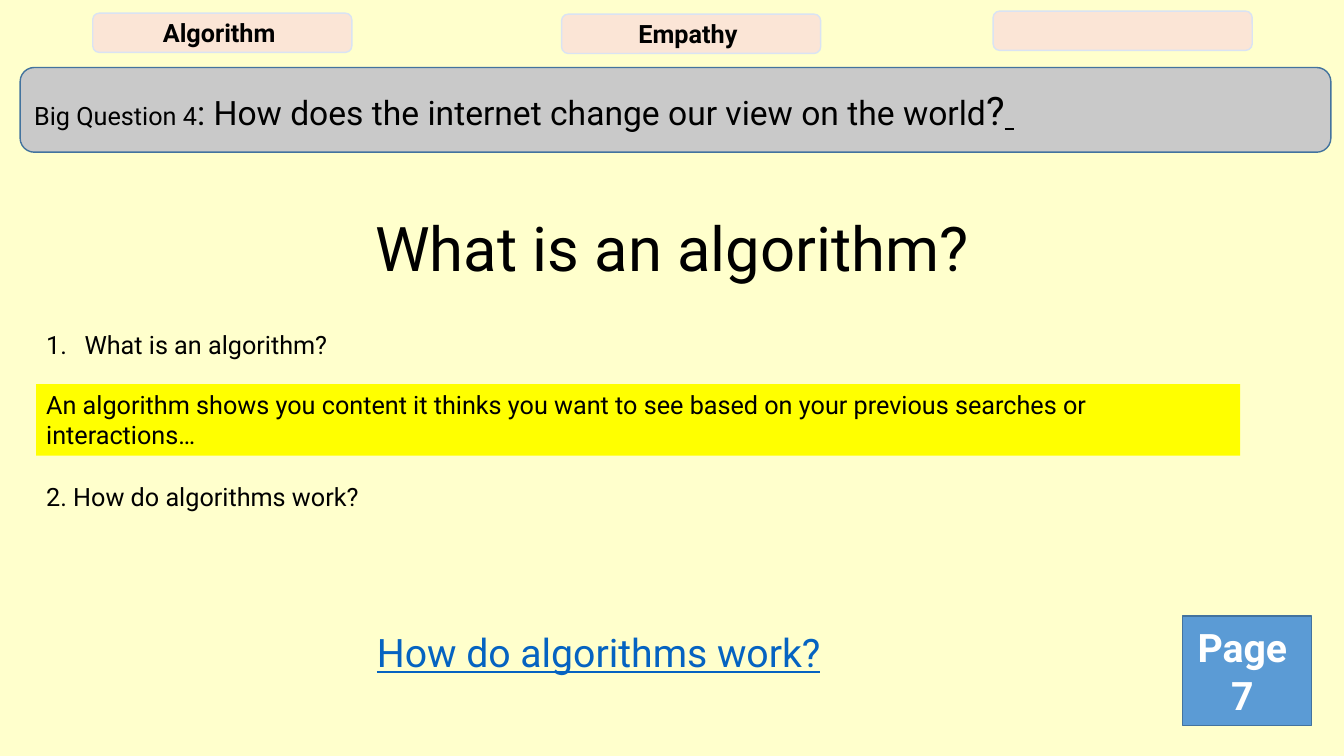
from pptx import Presentation
from pptx.dml.color import RGBColor
from pptx.enum.shapes import MSO_SHAPE as Shape
from pptx.enum.text import MSO_ANCHOR as Anchor, PP_ALIGN as Align
from pptx.oxml.xmlchemy import OxmlElement
from pptx.util import Inches, Pt

COLORS = {
    "background": "FFFFCC", "banner": "C9C9C9", "keyword": "FBE5D6",
    "keyword_line": "DAE3F3", "answer": "FFFF00", "page": "5B9BD5",
    "dark_line": "43739E", "text": "000000", "link": "0563C1", "white": "FFFFFF",
}

prs = Presentation()
prs.slide_width, prs.slide_height = Inches(13.33), Inches(7.5)
slide = prs.slides.add_slide(prs.slide_layouts[6])
slide.background.fill.solid()
slide.background.fill.fore_color.rgb = RGBColor.from_string(COLORS["background"])


def add_box(kind, box, fill=None, line=None, anchor=Anchor.MIDDLE):
    """Add a filled shape, or a plain text box when kind is None."""
    place = [Inches(length) for length in box]
    if kind is None:
        part = slide.shapes.add_textbox(*place)
    else:
        part = slide.shapes.add_shape(kind, *place)
        part.shadow.inherit = False
        part.fill.solid()
        part.fill.fore_color.rgb = RGBColor.from_string(COLORS[fill])
        if line:
            part.line.color.rgb = RGBColor.from_string(COLORS[line])
            part.line.width = Pt(1)
        else:
            part.line.fill.background()
    part.text_frame.word_wrap = True
    part.text_frame.vertical_anchor = anchor
    return part.text_frame


def write(paragraph, text, size=18, color="text", align=Align.LEFT, **formats):
    """Append one formatted run to a paragraph."""
    paragraph.alignment = align
    run = paragraph.add_run()
    run.text = text
    run.font.color.rgb = RGBColor.from_string(COLORS[color])
    for name, value in {"name": "Roboto", "size": Pt(size), **formats}.items():
        setattr(run.font, name, value)


# Big question banner
banner = add_box(Shape.ROUNDED_RECTANGLE, (0.2, 0.67, 13, 0.84), "banner", "dark_line")
for text, size, underline in [
    ("Big Question 4", 18, False),
    (": How does the internet change our view on the world", 24, False),
    ("?", 28, False),
    (" ", 28, True),
]:
    write(banner.paragraphs[0], text, size, underline=underline)

# Keyword tabs along the top
for left, top, word in [(0.92, 0.13, "Algorithm "), (9.85, 0.11, ""), (5.57, 0.14, "Empathy ")]:
    keyword = add_box(Shape.ROUNDED_RECTANGLE, (left, top, 2.57, 0.39), "keyword", "keyword_line")
    if word:
        write(keyword.paragraphs[0], word, align=Align.CENTER, bold=True)

# Title and video link
title = add_box(None, (0.92, 1.77, 11.5, 1.45))
write(title.paragraphs[0], "What is an algorithm?", 44, align=Align.CENTER)
video = add_box(None, (3.64, 6.24, 5.63, 0.62), anchor=Anchor.TOP)
write(video.paragraphs[0], "How do algorithms work?", 28, "link", underline=True)
for heading in (title, video):
    heading.paragraphs[0].line_spacing = 0.9

# Highlighted answer
answer = add_box(Shape.RECTANGLE, (0.36, 3.81, 11.94, 0.71), "answer", anchor=Anchor.TOP)
write(answer.paragraphs[0], "An algorithm shows you content it thinks you want to see "
      "based on your previous searches or interactions…")

# Questions, spaced to leave room for the answer between them
questions = add_box(None, (0.36, 3.22, 7.45, 1.92), anchor=Anchor.TOP)
first = questions.paragraphs[0]
properties = first._p.get_or_add_pPr()
properties.set("marL", str(Inches(0.38)))
properties.set("indent", str(Inches(-0.38)))
number = OxmlElement("a:buAutoNum")
number.set("type", "arabicPeriod")
properties.append(number)
write(first, "What is an algorithm?")
second = questions.add_paragraph()
second.space_before = Pt(86.5)
write(second, "2. How do algorithms work?")

# Page marker
page = add_box(Shape.RECTANGLE, (11.73, 6.11, 1.28, 1.09), "page", "dark_line")
for paragraph, text in [(page.paragraphs[0], "Page "), (page.add_paragraph(), "7 ")]:
    write(paragraph, text, 28, "white", Align.CENTER, bold=True)

prs.save("out.pptx")
